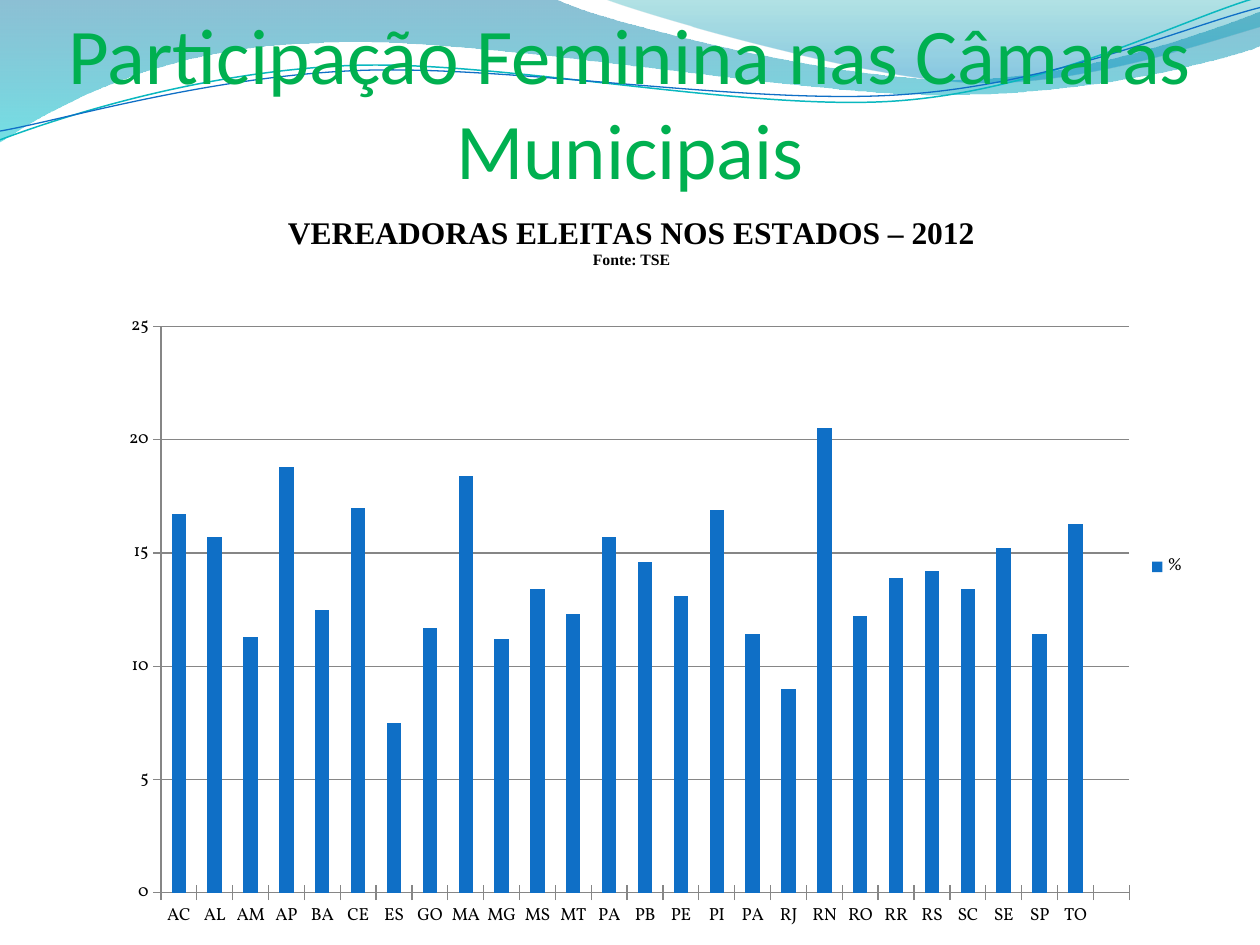
from math import cos, radians, sin

from lxml import etree
from pptx import Presentation
from pptx.chart.data import CategoryChartData
from pptx.dml.color import RGBColor
from pptx.enum.chart import XL_CHART_TYPE, XL_LEGEND_POSITION, XL_TICK_MARK
from pptx.enum.text import MSO_ANCHOR, PP_ALIGN
from pptx.oxml import parse_xml
from pptx.oxml.ns import nsdecls, qn
from pptx.util import Cm, Pt

COLUMNS = XL_CHART_TYPE.COLUMN_CLUSTERED
LEGEND_RIGHT = XL_LEGEND_POSITION.RIGHT
TICK_CROSS = XL_TICK_MARK.CROSS
BOTTOM = MSO_ANCHOR.BOTTOM
CENTER = PP_ALIGN.CENTER

COLORS = {"title": "00B050", "bar": "0F6FC6", "teal": "0AB8BF", "text": "000000", "axis": "868686"}
WAVE_UNIT = Cm(2.54)
STRAND_TILT = 2.7
STRAND_CENTER = (4.99, 0.58)


def rgb(name):
    return RGBColor.from_string(COLORS[name])


def add_wave(start, segments, closed):
    """Draw line segments (one point) and cubic curves (three points)."""
    builder = slide.shapes.build_freeform(start[0] * WAVE_UNIT, start[1] * WAVE_UNIT)
    builder.add_line_segments([(x * WAVE_UNIT, y * WAVE_UNIT) for segment in segments for x, y in segment],
                              close=closed)
    wave = builder.convert_to_shape()
    wave.shadow.inherit = False
    # Merge each run of three points into one curve
    steps = iter(list(wave._element.iter(qn("a:lnTo"))))
    for segment in segments:
        corners = [next(steps) for point in segment]
        if len(corners) == 3:
            curve = etree.Element(qn("a:cubicBezTo"))
            corners[0].addprevious(curve)
            for corner in corners:
                curve.append(corner[0])
                corner.getparent().remove(corner)
    return wave


prs = Presentation()
prs.slide_width, prs.slide_height = Cm(25.4), Cm(19.05)
slide = prs.slides.add_slide(prs.slide_layouts[6])

# Translucent bands: start, segments, gradient stops (position, colour, opacity)
bands = [
    ((0, 0),
     [[(4.4, -0.01)],
      [(4.76, 0.17), (6.64, 0.63), (7.58, 0.63)],
      [(8.53, 0.63), (9.58, 0.26), (10, 0.09)],
      [(10.01, 0.36)],
      [(9.83, 0.44), (8.7, 0.76), (7.46, 0.75)],
      [(6.22, 0.75), (3.82, 0.28), (2.57, 0.34)],
      [(1.29, 0.36), (0.46, 0.83), (-0.01, 1.13)],
      [(0, 0)]],
     [(0, "0074A1", 45), (100, "00C6CF", 55)]),
    ((4.79, -0.01),
     [[(5.09, 0.11), (6.82, 0.62), (7.69, 0.65)],
      [(8.56, 0.69), (9.61, 0.32), (10, 0.21)],
      [(10, 0)],
      [(4.79, -0.01)]],
     [(0, "00A1A9", 30), (80, "008BBF", 45)]),
]
for start, segments, stops in bands:
    band = add_wave(start, segments, True)
    band.line.fill.background()
    stop_xml = "".join(
        f'<a:gs pos="{pos * 1000}"><a:srgbClr val="{color}"><a:alpha val="{opacity * 1000}"/></a:srgbClr></a:gs>'
        for pos, color, opacity in stops)
    gradient = parse_xml(f'<a:gradFill {nsdecls("a")} rotWithShape="1"><a:gsLst>{stop_xml}</a:gsLst>'
                         '<a:lin ang="5400000" scaled="0"/></a:gradFill>')
    band._element.spPr.find(qn("a:custGeom")).addnext(gradient)

# Thin wave lines, levelled first and then tilted as whole shapes
strands = [
    ([[(0, 1.11)],
      [(0.48, 0.93), (1.58, 0.57), (2.77, 0.52)],
      [(3.95, 0.47), (5.93, 0.89), (7.13, 0.8)],
      [(8.33, 0.71), (9.38, 0.15), (9.98, -0.02)]], "teal", 0.85),
    ([[(0, 1.04)],
      [(0.47, 0.96), (1.64, 0.61), (2.83, 0.56)],
      [(4.03, 0.51), (5.97, 0.84), (7.17, 0.75)],
      [(8.36, 0.67), (9.41, 0.21), (10, 0.06)]], "bar", 0.75),
]
tilt_cos, tilt_sin = cos(radians(STRAND_TILT)), sin(radians(STRAND_TILT))
mid_x, mid_y = STRAND_CENTER
for segments, color, width in strands:
    level = [[(mid_x + (x - mid_x) * tilt_cos - (y - mid_y) * tilt_sin,
               mid_y + (x - mid_x) * tilt_sin + (y - mid_y) * tilt_cos) for x, y in segment]
             for segment in segments]
    strand = add_wave(level[0][0], level[1:], False)
    strand.rotation = 360 - STRAND_TILT
    strand.fill.background()
    strand.line.color.rgb = rgb(color)
    strand.line.width = Pt(width)

# Title
heading = slide.shapes.add_textbox(Cm(1.27), Cm(0.53), Cm(22.86), Cm(3.4)).text_frame
heading.word_wrap = True
heading.vertical_anchor = BOTTOM
heading.margin_left = heading.margin_right = heading.margin_bottom = 0
heading.margin_top = Cm(0.13)
heading.text = "Participação Feminina nas Câmaras Municipais"
heading.paragraphs[0].alignment = CENTER
heading_font = heading.paragraphs[0].runs[0].font
heading_font.name, heading_font.size = "Calibri", Pt(45)
heading_font.color.rgb = rgb("title")

# Share of women councillors by state, with one unnamed slot at the end
shares = [
    ("AC", 16.7), ("AL", 15.7), ("AM", 11.3), ("AP", 18.8), ("BA", 12.5), ("CE", 17), ("ES", 7.5),
    ("GO", 11.7), ("MA", 18.4), ("MG", 11.2), ("MS", 13.4), ("MT", 12.3), ("PA", 15.7), ("PB", 14.6),
    ("PE", 13.1), ("PI", 16.9), ("PA", 11.4), ("RJ", 9), ("RN", 20.5), ("RO", 12.2), ("RR", 13.9),
    ("RS", 14.2), ("SC", 13.4), ("SE", 15.2), ("SP", 11.4), ("TO", 16.3),
]
data = CategoryChartData()
data.categories = [state for state, share in shares]
data.add_series("%", [share for state, share in shares] + [None])
chart = slide.shapes.add_chart(COLUMNS, Cm(1.3), Cm(3.81), Cm(22.86), Cm(15.24), data).chart
chart.font.name, chart.font.size = "Vollkorn", Pt(10)
chart.font.color.rgb = rgb("text")

# Chart title
chart.has_title = True
caption = chart.chart_title.text_frame
caption.text = "VEREADORAS ELEITAS NOS ESTADOS – 2012\nFonte: TSE"
for paragraph, size in zip(caption.paragraphs, (18, 9)):
    font = paragraph.runs[0].font
    font.name, font.size, font.bold = "Times New Roman", Pt(size), True
    font.color.rgb = rgb("text")

# Legend, bars and axes
chart.has_legend = True
chart.legend.position = LEGEND_RIGHT
chart.legend.include_in_layout = False
plot = chart.plots[0]
plot.gap_width = 150
plot.vary_by_categories = False
bars = plot.series[0]
bars.invert_if_negative = False
bars.format.fill.solid()
bars.format.fill.fore_color.rgb = rgb("bar")

percent_axis = chart.value_axis
percent_axis.has_major_gridlines = True
for axis in (chart.category_axis, percent_axis):
    axis.major_tick_mark = TICK_CROSS
for ruled in (chart.category_axis, percent_axis, percent_axis.major_gridlines):
    ruled.format.line.color.rgb = rgb("axis")
    ruled.format.line.width = Pt(0.75)

# Fixed inner plot area
plot_area = chart._chartSpace.chart.plotArea
for old_layout in plot_area.findall(qn("c:layout")):
    plot_area.remove(old_layout)
layout = etree.Element(qn("c:layout"))
manual = etree.SubElement(layout, qn("c:manualLayout"))
for tag, value in (("layoutTarget", "inner"), ("xMode", "edge"), ("yMode", "edge"),
                   ("x", 0.085), ("y", 0.182), ("w", 0.854), ("h", 0.749)):
    etree.SubElement(manual, qn(f"c:{tag}")).set("val", str(value))
plot_area.insert(0, layout)

prs.save("out.pptx")
